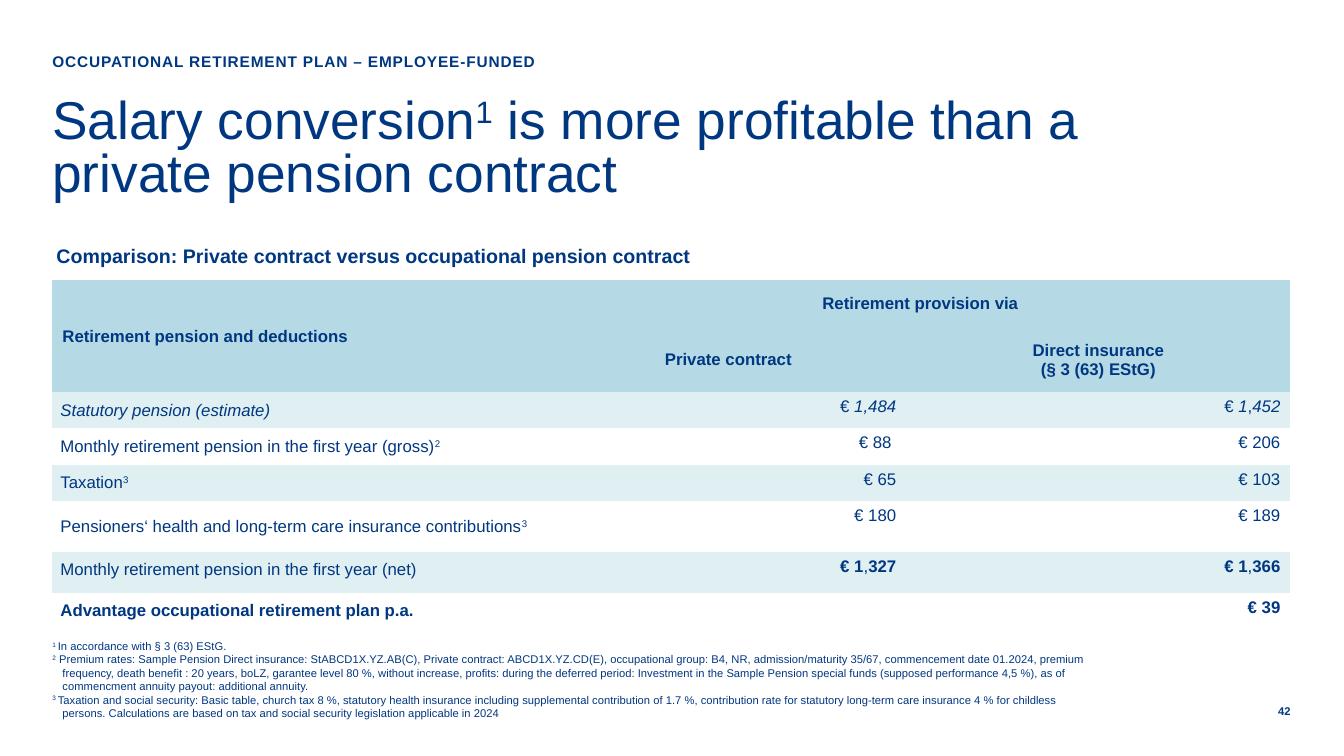
import pptx
import pptx.util
import pptx.dml.color
import pptx.enum.text
from dataclasses import dataclass

ALIGN = pptx.enum.text.PP_ALIGN
ANCHOR = pptx.enum.text.MSO_ANCHOR
WIDE, HIGH = 13.33, 7.5


@dataclass(frozen=True)
class Theme:
    font: str = "Arial"
    ink: str = "003781"
    head: str = "B5DAE6"
    band: str = "DFEFF2"
    title: int = 38
    sub: int = 14
    cell: int = 12
    kicker: int = 11
    note: int = 8


THEME = Theme()
PLAIN_GRID = "{2D5ABB26-0587-4C30-8999-92F81FD0307C}"


def inch(size):
    return pptx.util.Inches(size)


def box(left, top, width, height):
    """Turn percentages of the slide into inches."""
    return left * WIDE / 100, top * HIGH / 100, width * WIDE / 100, height * HIGH / 100


def part(area, top, height):
    """Cut a full-width strip, given as shares of the area's height."""
    x, y, w, h = area
    return x, y + top * h, w, height * h


def write(frame, paras, size, bold=False, align=ALIGN.LEFT, anchor=ANCHOR.TOP,
          lead=None, hang=0, track=0):
    """Fill a frame; a paragraph is a list of runs: text, or (text, marks).

    Marks: b bold, n not bold, i italic, s superscript.
    """
    frame.word_wrap = True
    frame.vertical_anchor = anchor
    for index, runs in enumerate(paras):
        para = frame.add_paragraph() if index else frame.paragraphs[0]
        para.alignment = align
        if lead:
            para.line_spacing = pptx.util.Pt(lead)
        if hang:
            props = para._p.get_or_add_pPr()
            props.set("marL", str(inch(hang)))
            props.set("indent", str(-inch(hang)))
        for item in runs:
            text, marks = (item, "") if isinstance(item, str) else item
            for count, line in enumerate(text.split("\n")):
                if count:
                    para.add_line_break()
                run = para.add_run()
                run.text = line
                font = run.font
                font.name, font.size = THEME.font, pptx.util.Pt(size)
                font.bold = (bold or "b" in marks) and "n" not in marks
                font.italic = "i" in marks
                font.color.rgb = pptx.dml.color.RGBColor.from_string(THEME.ink)
                if "s" in marks:
                    font._element.set("baseline", "30000")
                if track:
                    font._element.set("spc", str(track))


def label(slide, area, paras, size, **style):
    frame = slide.shapes.add_textbox(*map(inch, area)).text_frame
    frame.margin_left = frame.margin_right = frame.margin_top = frame.margin_bottom = 0
    write(frame, paras, size, **style)


def header(slide, area):
    label(slide, part(area, 0, 0.19), [["OCCUPATIONAL RETIREMENT PLAN – EMPLOYEE-FUNDED"]],
          THEME.kicker, bold=True, track=60)
    label(slide, part(area, 0.3, 0.7),
          [["Salary conversion", ("1", "s"), " is more profitable than a private pension contract"]],
          THEME.title, lead=38)


COLS = [4.94, 3.53, 3.81]
ROWS = [0.47, 0.64, 0.33, 0.33, 0.33, 0.51, 0.4, 0.33, 0.3]
HEADS = [
    (0, 0, "Retirement pension and deductions", ALIGN.LEFT),
    (0, 1, "Retirement provision via", ALIGN.CENTER),
    (1, 1, "Private contract", ALIGN.CENTER),
    (1, 2, "Direct insurance\n(§ 3 (63) EStG)", ALIGN.CENTER),
]
BODY = [
    ([("Statutory pension (estimate)", "i")],
     ["€ ", ("1,484", "i")], ["€ ", ("1", "i"), ",", ("452", "i")]),
    (["Monthly retirement pension in the first year (gross)", ("2", "s")], ["€ 88 "], ["€ 206"]),
    (["Taxation", ("3", "s")], ["€ 65"], ["€ 103"]),
    (["Pensioners‘ health and long-term care insurance contributions", ("3", "s")],
     ["€ 180"], ["€ 189"]),
    (["Monthly retirement pension in the first year (net)"],
     [("€ 1", "b"), ",", ("327", "b")], [("€ 1", "b"), ",", ("366", "b")]),
    ([("Advantage occupational retirement plan p.a.", "b")], [], [("€ 39", "b")]),
]


def paint(cell, color):
    if color:
        cell.fill.solid()
        cell.fill.fore_color.rgb = pptx.dml.color.RGBColor.from_string(color)
    else:
        cell.fill.background()


def pad(cell, side, end):
    cell.margin_left = cell.margin_right = inch(side)
    cell.margin_top = cell.margin_bottom = inch(end)


def pension(slide, area):
    """Build the comparison table."""
    frame = slide.shapes.add_table(len(ROWS), len(COLS), *map(inch, area))
    table = frame.table
    table.first_row = table.horz_banding = False
    table._tbl.tblPr[0].text = PLAIN_GRID
    for col, share in zip(table.columns, COLS):
        col.width = inch(area[2] * share / sum(COLS))
    for row, share in zip(table.rows, ROWS):
        row.height = inch(area[3] * share / sum(ROWS))

    for r in range(len(ROWS)):
        banded = r % 2 == 0 and r < len(ROWS) - 1
        color = THEME.head if r < 2 else THEME.band if banded else None
        for cell in table.rows[r].cells:
            paint(cell, color)
    table.cell(0, 0).merge(table.cell(1, 0))
    table.cell(0, 1).merge(table.cell(0, 2))

    for r, c, text, align in HEADS:
        cell = table.cell(r, c)
        pad(cell, 0.1, 0.05)
        cell.vertical_anchor = ANCHOR.MIDDLE
        write(cell.text_frame, [[text]], THEME.cell, bold=True, align=align, anchor=ANCHOR.MIDDLE)
    for r, row in enumerate(BODY, 2):
        for c, runs in enumerate(row):
            if not runs:
                continue
            cell = table.cell(r, c)
            pad(cell, *((0.1, 0.05) if c else (0.08, 0.08)))
            anchor = ANCHOR.MIDDLE if c == 0 and r < 6 else ANCHOR.TOP
            cell.vertical_anchor = anchor
            write(cell.text_frame, [runs], THEME.cell, anchor=anchor,
                  align=ALIGN.RIGHT if c else ALIGN.LEFT)


NOTES = [
    [("1 ", "s"), "In accordance with § 3 (63) EStG."],
    [("2", "s"),
     " Premium rates: Sample Pension Direct insurance: StABCD1X.YZ.AB(C), Private contract: "
     "ABCD1X.YZ.CD(E), occupational group: B4, NR, admission/maturity 35/67, commencement date "
     "01.2024, premium frequency, death benefit : 20 years, boLZ, garantee level 80 %, without "
     "increase, profits: during the deferred period: Investment in the Sample Pension special "
     "funds (supposed performance 4,5 %), as of commencment annuity payout: additional annuity."],
    [("3 ", "s"),
     "Taxation and social security: Basic table, church tax 8 %, statutory health insurance "
     "including supplemental contribution of 1.7 %, contribution rate for statutory long-term "
     "care insurance 4 % for childless persons. Calculations are based on tax and social "
     "security legislation applicable in 2024"],
]


def main():
    deck = pptx.Presentation()
    deck.slide_width, deck.slide_height = inch(WIDE), inch(HIGH)
    slide = deck.slides.add_slide(deck.slide_layouts[6])
    header(slide, box(3.9, 6.93, 76.52, 19.47))
    label(slide, box(4.2, 32.27, 66.77, 3.2),
          [["Comparison: Private contract versus occupational pension contract"]],
          THEME.sub, bold=True)
    pension(slide, box(3.9, 37.07, 92.12, 48.53))
    label(slide, box(3.9, 89.87, 78.24, 5.33), NOTES, THEME.note, anchor=ANCHOR.BOTTOM, hang=0.1)
    label(slide, box(93.85, 92.93, 2.18, 2.13), [["42"]], THEME.note, bold=True,
          align=ALIGN.RIGHT, anchor=ANCHOR.MIDDLE, lead=10)
    deck.save("out.pptx")


if __name__ == "__main__":
    main()
